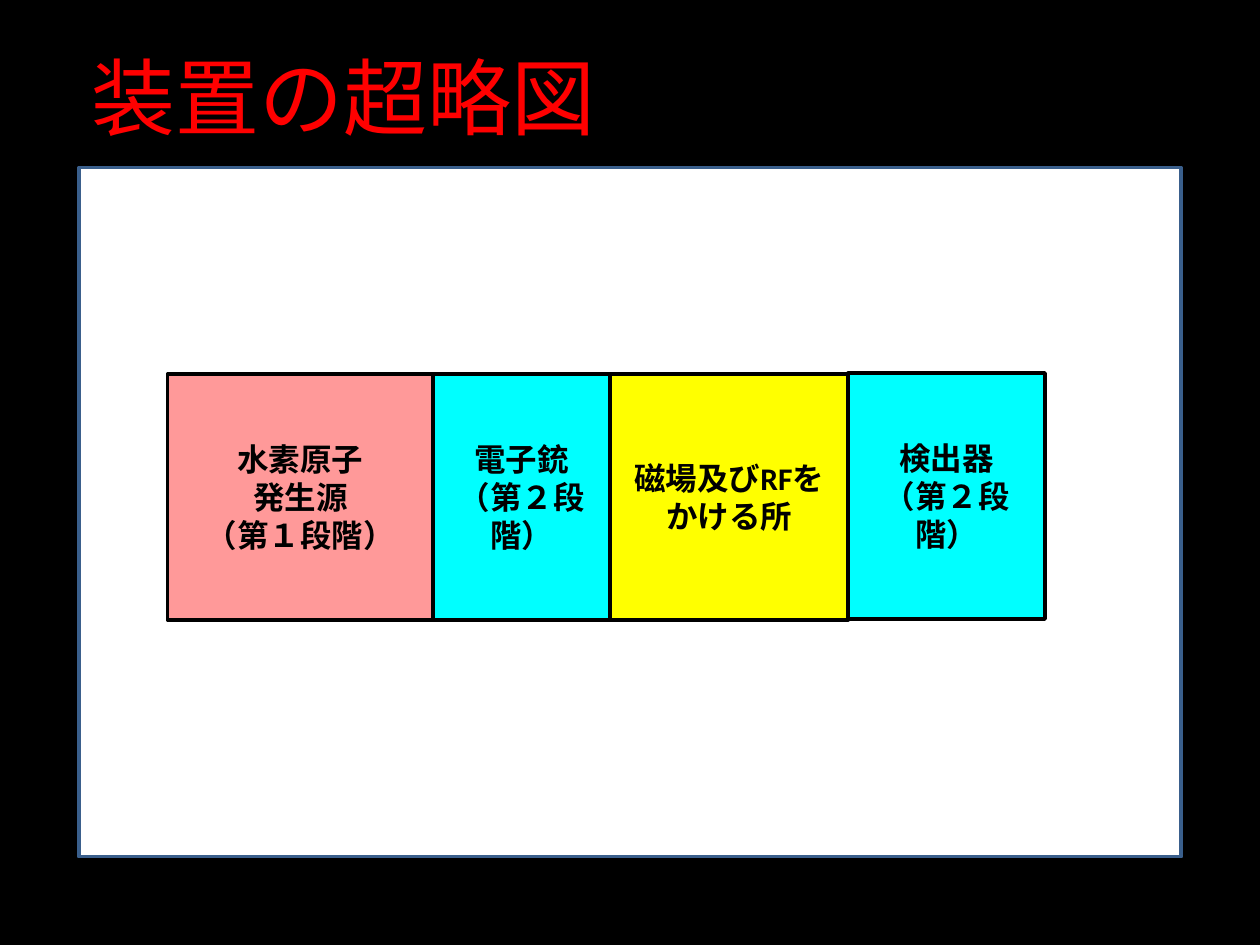
from pptx import Presentation
from pptx.dml.color import RGBColor
from pptx.enum.shapes import MSO_SHAPE
from pptx.enum.text import MSO_ANCHOR, MSO_AUTO_SIZE, PP_ALIGN
from pptx.util import Pt

BLACK = RGBColor(0x00, 0x00, 0x00)
WHITE = RGBColor(0xFF, 0xFF, 0xFF)
RED = RGBColor(0xFF, 0x00, 0x00)
PINK = RGBColor(0xFF, 0x99, 0x99)
CYAN = RGBColor(0x00, 0xFF, 0xFF)
YELLOW = RGBColor(0xFF, 0xFF, 0x00)
BLUE = RGBColor(0x3A, 0x5F, 0x8C)


def write(tf, text, font="Calibri", size=18, color=BLACK, bold=False,
          align=PP_ALIGN.LEFT, anchor=MSO_ANCHOR.TOP):
    tf.word_wrap = True
    tf.vertical_anchor = anchor
    for i, line in enumerate(text.split("\n")):
        p = tf.paragraphs[0] if i == 0 else tf.add_paragraph()
        p.alignment = align
        r = p.add_run()
        r.text = line
        r.font.name = font
        r.font.size = Pt(size)
        r.font.bold = bold
        r.font.color.rgb = color


def add_rect(s, left, top, width, height, fill, line):
    sp = s.shapes.add_shape(MSO_SHAPE.RECTANGLE, Pt(left), Pt(top), Pt(width), Pt(height))
    sp.shadow.inherit = False
    sp.fill.solid()
    sp.fill.fore_color.rgb = fill
    sp.line.color.rgb = line
    sp.line.width = Pt(2)
    return sp


prs = Presentation()
prs.slide_width, prs.slide_height = Pt(720), Pt(540)
s = prs.slides.add_slide(prs.slide_layouts[6])
s.background.fill.solid()
s.background.fill.fore_color.rgb = BLACK

title = s.shapes.add_textbox(Pt(45), Pt(22.5), Pt(343.5), Pt(65))
write(title.text_frame, "装置の超略図", font="Arial", size=48, color=RED)
title.text_frame.auto_size = MSO_AUTO_SIZE.SHAPE_TO_FIT_TEXT

add_rect(s, 45, 95.75, 630, 393.75, WHITE, BLUE)

stages = [
    ("水素原子\n発生源\n（第１段階）", 151.8, 213.75, PINK),
    ("電子銃\n（第２段階）", 101.2, 213.75, CYAN),
    ("磁場及びRFをかける所", 136, 213.75, YELLOW),
    ("検出器\n（第２段階）", 112.5, 213.2, CYAN),
]
left = 95.7
for text, width, top, fill in stages:
    sp = add_rect(s, left, top, width, 140.6, fill, BLACK)
    write(sp.text_frame, text, bold=True, align=PP_ALIGN.CENTER, anchor=MSO_ANCHOR.MIDDLE)
    left += width

prs.save("out.pptx")
